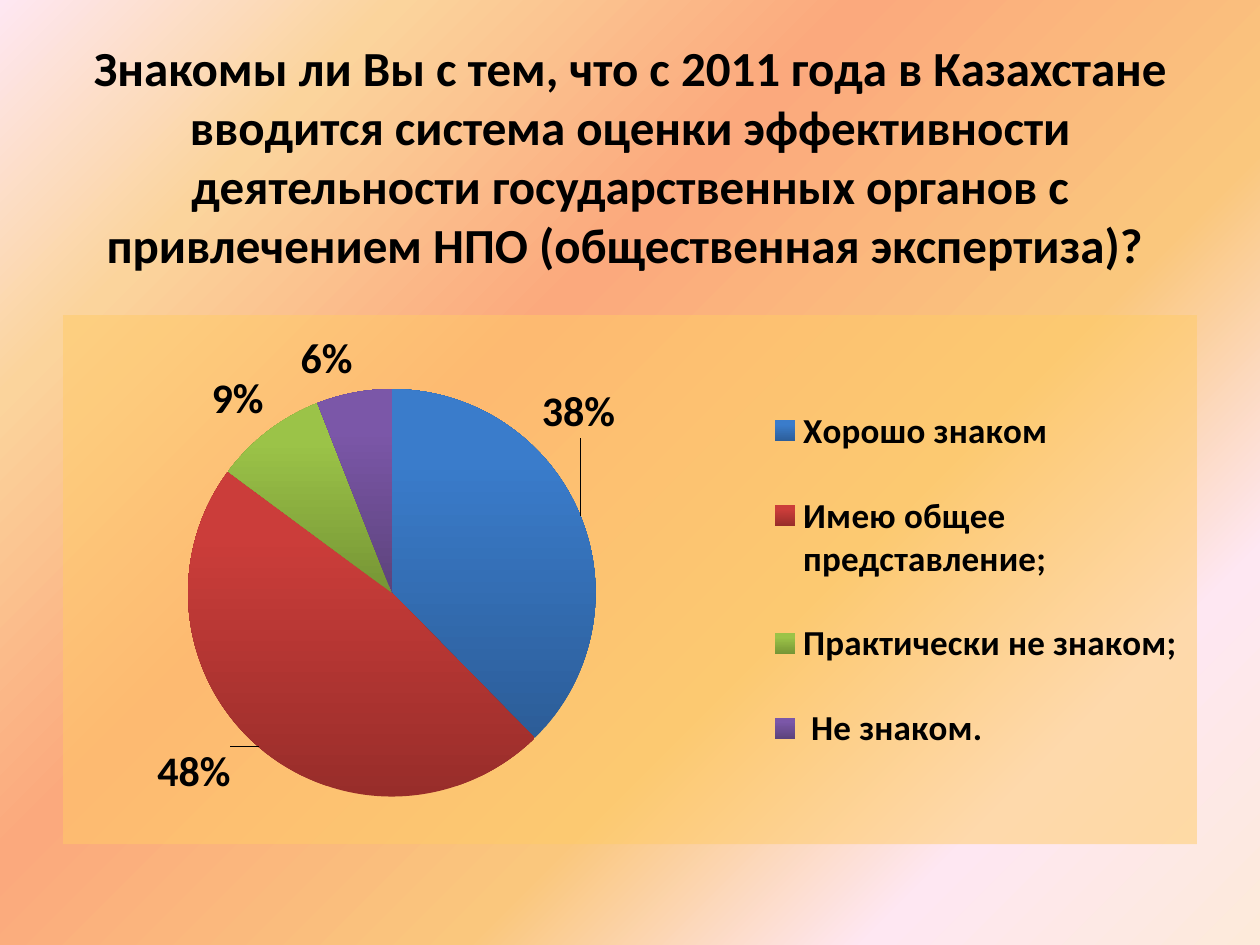
import copy
import pptx
import pptx.chart.data
import pptx.dml.color
import pptx.enum.chart
import pptx.enum.text
import pptx.oxml
import pptx.oxml.ns
import pptx.util

TITLE = ("Знакомы ли Вы с тем, что с 2011 года в Казахстане вводится система оценки "
         "эффективности деятельности государственных органов с привлечением НПО "
         "(общественная экспертиза)? ")
SLICES = [
    ("Хорошо знаком", 38, "2C5D98", "3A7CCB", (-0.04, -0.14)),
    ("Имею общее представление;", 48, "982D2A", "CB3D3A", (-0.02, -0.01)),
    ("Практически не знаком;", 9, "769535", "9BC348", None),
    (" Не знаком.", 6, "5D437C", "7B57A8", None),
]
THEME = {
    "font": "Calibri", "ink": "000000", "panel": "FFCC66",
    "title": 28, "label": 24, "legend": 20,
    "back": [(0, "FDEADA"), (18, "FEE7F2"), (36, "FAC77D"),
             (61, "FBA97D"), (82, "FBD49C"), (100, "FEE7F2")],
}
SIZE = (25.4, 19.05)
HEAD = (1.27, 0.76, 22.86, 4.75)
CHART = (1.27, 6.35, 22.86, 10.67)
PIE = (0.11, 0.14, 0.36, 0.77)
KEY = (0.62, 0.1, 0.37, 0.8)

Cm = pptx.util.Cm
qn = pptx.oxml.ns.qn


def tint(code):
    return pptx.dml.color.RGBColor.from_string(code)


def style(font, size):
    font.name = THEME["font"]
    font.size = pptx.util.Pt(size)
    font.bold = True
    font.color.rgb = tint(THEME["ink"])


def blend(fill, root, stops, angle):
    fill.gradient()
    fill.gradient_angle = angle
    if root is not None:
        group = next(root.iter(qn("a:gsLst")))
        for _ in stops[2:]:
            group.append(copy.deepcopy(group[0]))
    for stop, (place, code) in zip(fill.gradient_stops, stops):
        stop.position = place / 100
        stop.color.rgb = tint(code)


def layout(values, inner=False):
    names = ("x", "y", "w", "h")[:len(values)]
    target = '<c:layoutTarget val="inner"/>' if inner else ""
    modes = "".join(f'<c:{n}Mode val="edge"/>' for n in names[:2]) if len(values) == 4 else ""
    parts = "".join(f'<c:{n} val="{v}"/>' for n, v in zip(names, values))
    return pptx.oxml.parse_xml(
        f'<c:layout {pptx.oxml.ns.nsdecls("c")}><c:manualLayout>'
        f'{target}{modes}{parts}</c:manualLayout></c:layout>')


def put(parent, node, after=None):
    for old in parent.findall(qn("c:layout")):
        parent.remove(old)
    if after is None:
        parent.insert(0, node)
    else:
        parent.find(qn(after)).addnext(node)


def head(slide):
    title = slide.shapes.title
    title.left, title.top, title.width, title.height = map(Cm, HEAD)
    frame = title.text_frame
    frame.text = TITLE
    frame.word_wrap = True
    frame.vertical_anchor = pptx.enum.text.MSO_ANCHOR.MIDDLE
    line = frame.paragraphs[0]
    line.alignment = pptx.enum.text.PP_ALIGN.CENTER
    style(line.font, THEME["title"])


def labels(note):
    note.show_percentage = True
    note.show_value = False
    note.position = pptx.enum.chart.XL_LABEL_POSITION.OUTSIDE_END
    note.number_format = "0%"
    note.number_format_is_linked = False
    style(note.font, THEME["label"])


def pie(slide):
    data = pptx.chart.data.CategoryChartData()
    data.categories = [row[0] for row in SLICES]
    data.add_series("Series 1", [row[1] for row in SLICES])
    chart = slide.shapes.add_chart(
        pptx.enum.chart.XL_CHART_TYPE.PIE, *map(Cm, CHART), data).chart
    chart.has_title = False
    chart.font.name = THEME["font"]
    chart.font.size = pptx.util.Pt(10)
    chart.font.color.rgb = tint(THEME["ink"])
    chart.has_legend = True
    chart.legend.position = pptx.enum.chart.XL_LEGEND_POSITION.RIGHT
    chart.legend.include_in_layout = False
    style(chart.legend.font, THEME["legend"])

    plot = chart.plots[0]
    plot.vary_by_categories = True
    series = plot.series[0]
    labels(series.data_labels)
    for spot, (_, _, dark, light, _) in enumerate(SLICES):
        point = series.points[spot]
        blend(point.format.fill, None, [(0, dark), (80, light)], 90)
        note = point.data_label
        note.position = pptx.enum.chart.XL_LABEL_POSITION.OUTSIDE_END
        style(note.font, THEME["label"])

    root = chart.element
    for node, row in zip(root.iter(qn("c:dLbl")), SLICES):
        node.find(qn("c:showVal")).set("val", "0")
        node.find(qn("c:showPercent")).set("val", "1")
        if row[4]:
            put(node, layout(row[4]), "c:idx")
    put(next(root.iter(qn("c:plotArea"))), layout(PIE, True))
    put(next(root.iter(qn("c:legend"))), layout(KEY), "c:legendPos")
    root.find(qn("c:chart")).addnext(pptx.oxml.parse_xml(
        f'<c:spPr {pptx.oxml.ns.nsdecls("c", "a")}><a:solidFill>'
        f'<a:srgbClr val="{THEME["panel"]}"><a:alpha val="50000"/></a:srgbClr>'
        '</a:solidFill><a:ln><a:noFill/></a:ln></c:spPr>'))


def main():
    deck = pptx.Presentation()
    deck.slide_width, deck.slide_height = map(Cm, SIZE)
    slide = deck.slides.add_slide(deck.slide_layouts[5])
    blend(slide.background.fill, slide.element, THEME["back"], 135)
    head(slide)
    pie(slide)
    deck.save("out.pptx")


if __name__ == "__main__":
    main()
